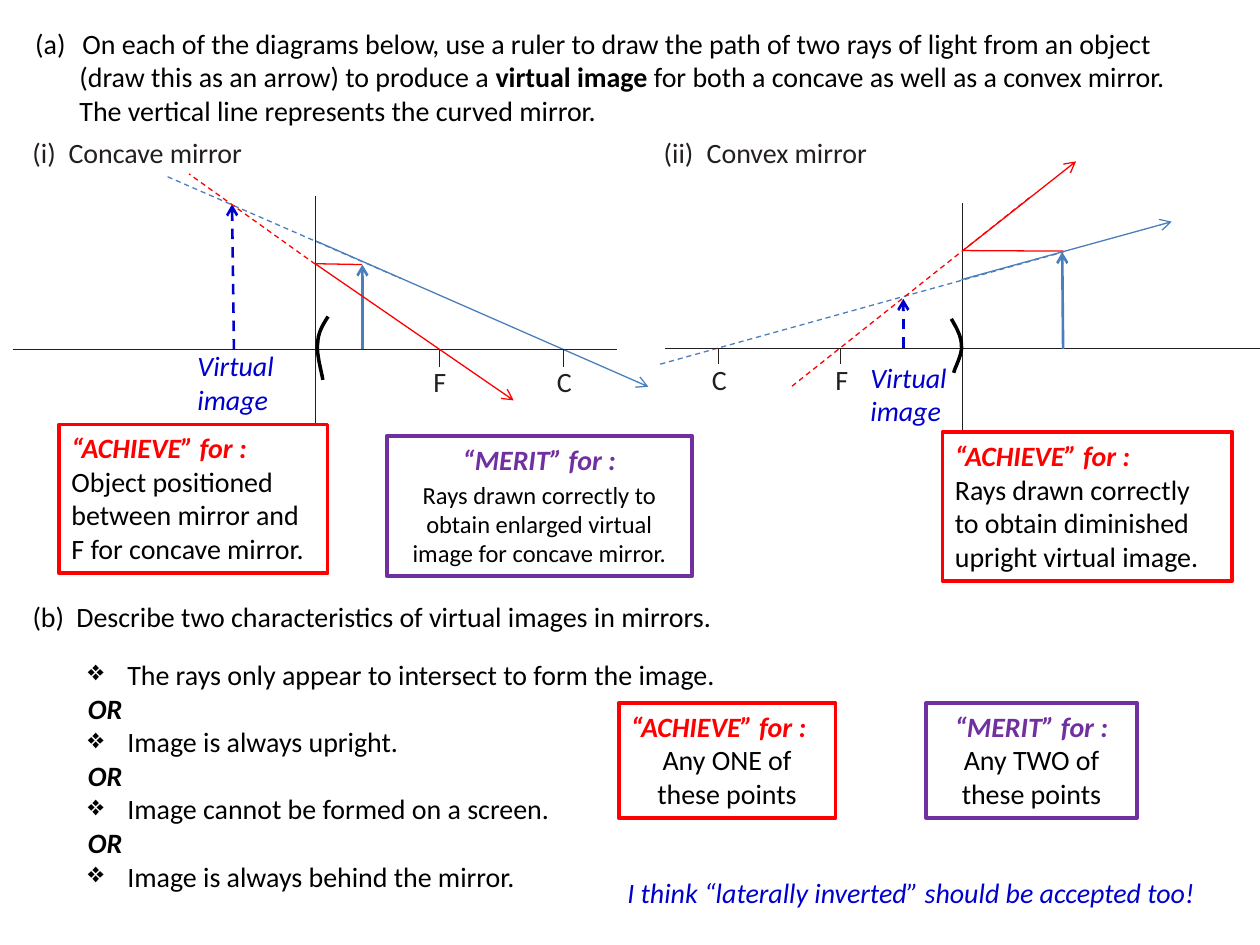
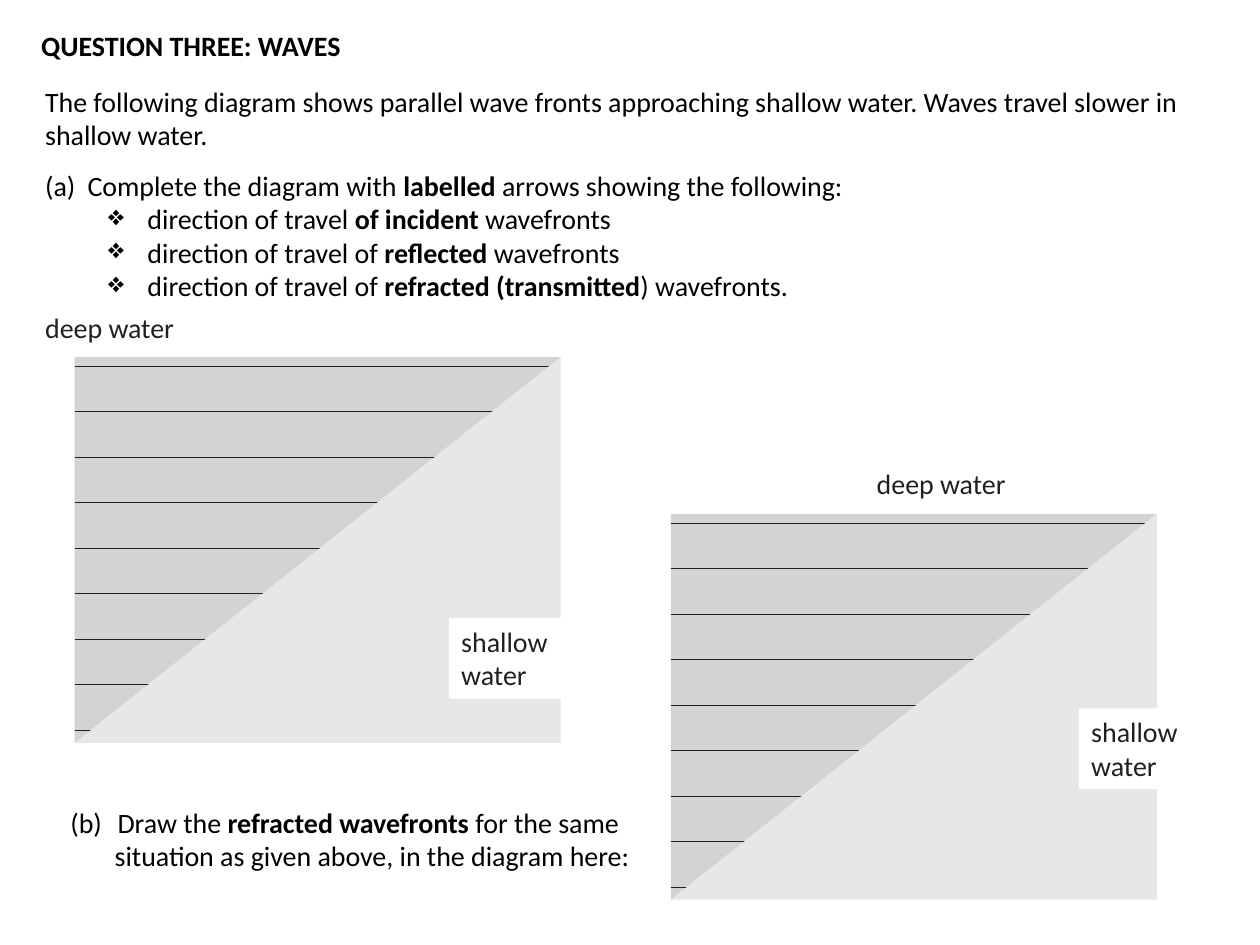
from dataclasses import dataclass

from lxml import etree
from pptx import Presentation
from pptx.dml.color import RGBColor
from pptx.enum.dml import MSO_LINE
from pptx.enum.shapes import MSO_CONNECTOR, MSO_SHAPE
from pptx.enum.text import MSO_ANCHOR, PP_ALIGN
from pptx.oxml.ns import qn
from pptx.util import Pt

STRAIGHT = MSO_CONNECTOR.STRAIGHT
RECT = MSO_SHAPE.RECTANGLE
DASH = MSO_LINE.DASH
TOP = MSO_ANCHOR.TOP
LEFT, CENTER = PP_ALIGN.LEFT, PP_ALIGN.CENTER


@dataclass(frozen=True)
class Theme:
    """Colours, font and type sizes shared by both slides."""
    font: str = "Calibri"
    body: float = 16
    small: float = 14
    black: str = "000000"
    ink: str = "231F20"
    white: str = "FFFFFF"
    red: str = "FF0000"
    blue: str = "4B7EBC"
    answer: str = "0000CC"
    merit: str = "7030A0"
    deep: str = "D1D3D4"
    shallow: str = "E6E7E8"
    hairline: float = 0.5
    ray: float = 0.75
    arrow: float = 1.5
    arc: float = 2
    frame: float = 2.25


T = Theme()


@dataclass(frozen=True)
class Para:
    """A paragraph; asterisks in its text enclose bold words."""
    text: str
    size: float = T.body
    color: str = T.black
    bold: bool = False
    italic: bool = False
    align: PP_ALIGN = LEFT
    left: float = 0
    hang: float = 0
    bullet: str = ""
    number: int = 0
    spacing: float = 1
    before: float = 0


@dataclass(frozen=True)
class Stroke:
    """A straight line, with an optional arrowhead at its end."""
    x1: float
    y1: float
    x2: float
    y2: float
    color: str = T.ink
    width: float = T.hairline
    dashed: bool = False
    arrow: bool = False


@dataclass(frozen=True)
class Criterion:
    """A framed marking note."""
    x: float
    y: float
    w: float
    h: float
    grade: str
    body: str
    color: str
    heading_align: PP_ALIGN = LEFT
    body_align: PP_ALIGN = LEFT
    size: float = T.body
    before: float = 0


@dataclass(frozen=True)
class MirrorDiagram:
    """A ray diagram with its lettered points and curved mirror."""
    strokes: tuple
    letters: tuple
    letter_y: float
    image_at: tuple
    arc: tuple
    tilt: float = 0


@dataclass(frozen=True)
class Pool:
    """A wave tank with the places of its two labels."""
    x: float
    y: float
    deep_at: tuple
    shallow_at: tuple


def rgb(color: str) -> RGBColor:
    """Turn a hex string into a colour."""
    return RGBColor.from_string(color)


def write(tf, paras, inset: bool = True) -> None:
    """Fill a text frame with paragraphs."""
    tf.word_wrap = True
    tf.vertical_anchor = TOP
    if not inset:
        tf.margin_left = tf.margin_right = tf.margin_top = tf.margin_bottom = 0
    for i, para in enumerate(paras):
        p = tf.paragraphs[0] if i == 0 else tf.add_paragraph()
        p.alignment = para.align
        if para.spacing != 1:
            p.line_spacing = para.spacing
        if para.before:
            p.space_before = Pt(para.before)
        pPr = p._p.get_or_add_pPr()
        pPr.set("marL", str(Pt(para.left)))
        pPr.set("indent", str(Pt(-para.hang)))
        if para.number:
            etree.SubElement(pPr, qn("a:buAutoNum"), type="alphaLcParenBoth",
                             startAt=str(para.number))
        elif para.bullet:
            etree.SubElement(pPr, qn("a:buChar"), char=para.bullet)
        for j, part in enumerate(para.text.split("*")):
            if part:
                r = p.add_run()
                r.text = part
                r.font.name, r.font.size = T.font, Pt(para.size)
                r.font.bold = para.bold or j % 2 == 1
                r.font.italic = para.italic
                r.font.color.rgb = rgb(para.color)


def add_text(s, x: float, y: float, w: float, h: float, *paras: Para, inset: bool = True) -> None:
    """Add a text box."""
    write(s.shapes.add_textbox(Pt(x), Pt(y), Pt(w), Pt(h)).text_frame, paras, inset)


def add_box(s, x: float, y: float, w: float, h: float, *paras: Para, line: str = "") -> None:
    """Add a white rectangle holding text."""
    sp = s.shapes.add_shape(RECT, Pt(x), Pt(y), Pt(w), Pt(h))
    sp.shadow.inherit = False
    sp.fill.solid()
    sp.fill.fore_color.rgb = rgb(T.white)
    if line:
        sp.line.color.rgb, sp.line.width = rgb(line), Pt(T.frame)
    else:
        sp.line.fill.background()
    write(sp.text_frame, paras)


def add_stroke(s, k: Stroke) -> None:
    """Draw one straight line."""
    c = s.shapes.add_connector(STRAIGHT, Pt(k.x1), Pt(k.y1), Pt(k.x2), Pt(k.y2))
    c.line.color.rgb, c.line.width = rgb(k.color), Pt(k.width)
    if k.dashed:
        c.line.dash_style = DASH
    if k.arrow:
        etree.SubElement(c.line._get_or_add_ln(), qn("a:tailEnd"), type="arrow")
    etree.SubElement(c._element.spPr, qn("a:effectLst"))


def add_outline(s, points, fill: str = "", line: str = "", tilt: float = 0) -> None:
    """Draw a filled polygon or an open line through the points."""
    (x, y), *rest = [(Pt(a), Pt(b)) for a, b in points]
    fb = s.shapes.build_freeform(x, y)
    fb.add_line_segments(rest, close=bool(fill))
    sp = fb.convert_to_shape()
    sp.shadow.inherit = False
    sp.rotation = tilt
    if fill:
        sp.fill.solid()
        sp.fill.fore_color.rgb = rgb(fill)
    else:
        sp.fill.background()
    if line:
        sp.line.color.rgb, sp.line.width = rgb(line), Pt(T.arc)
    else:
        sp.line.fill.background()


def curve(knots, steps: int = 10) -> list:
    """Sample a chain of cubic Bezier curves."""
    points = [knots[0]]
    for start in range(0, len(knots) - 1, 3):
        segment = knots[start:start + 4]
        for t in (i / steps for i in range(1, steps + 1)):
            weights = ((1 - t) ** 3, 3 * t * (1 - t) ** 2, 3 * t * t * (1 - t), t ** 3)
            points.append(tuple(sum(w * k[axis] for w, k in zip(weights, segment))
                                for axis in (0, 1)))
    return points


def add_mirror(s, d: MirrorDiagram) -> None:
    """Draw a ray diagram."""
    for k in d.strokes:
        add_stroke(s, k)
    for letter, x in d.letters:
        add_text(s, x, d.letter_y, 9, 14, Para(letter, color=T.ink), inset=False)
    add_text(s, *d.image_at, 80, 46, Para("Virtual image", color=T.answer, italic=True))
    add_outline(s, curve(d.arc), line=T.black, tilt=d.tilt)


def add_criterion(s, c: Criterion) -> None:
    """Draw a framed marking note."""
    add_box(s, c.x, c.y, c.w, c.h,
            Para(f"“{c.grade}” for :", color=c.color, bold=True, italic=True,
                 align=c.heading_align),
            Para(c.body, size=c.size, align=c.body_align, before=c.before), line=c.color)


def add_pool(s, pool: Pool) -> None:
    """Draw a tank with wavefronts that end at the shallow water."""
    w, h, first, gap, count = 277.7, 220.5, 5.3, 26, 9
    x, y, right, bottom = pool.x, pool.y, pool.x + w, pool.y + h
    add_outline(s, [(right, y), (x, y), (x, bottom)], fill=T.deep)
    for i in range(count):
        front = y + first + i * gap
        add_stroke(s, Stroke(x, front, x + 273, front))
    add_outline(s, [(right, y), (x, bottom), (right, bottom)], fill=T.shallow)
    add_text(s, *pool.deep_at, 95, 26.6, Para("deep water", color=T.ink))
    add_box(s, *pool.shallow_at, 90.7, 46, Para("shallow water", color=T.ink))


CONCAVE = MirrorDiagram(
    strokes=(
        Stroke(180, 137.5, 370.5, 221, T.blue, T.ray, arrow=True),
        Stroke(7.2, 199.8, 352.6, 199.8),
        Stroke(180.2, 112, 180.2, 287.5),
        Stroke(321.8, 199.8, 321.8, 209.7),
        Stroke(251, 199.8, 251, 209.7),
        Stroke(207.1, 199.6, 207.1, 151.2, T.blue, T.arrow, arrow=True),
        Stroke(206.8, 151.2, 180.2, 150.7, T.red, T.ray),
        Stroke(180.5, 151, 293.5, 228.8, T.red, T.ray, arrow=True),
        Stroke(95.8, 101, 229, 159.1, T.blue, T.ray, dashed=True),
        Stroke(133.7, 199.8, 132.6, 116.8, T.answer, T.arrow, dashed=True, arrow=True),
        Stroke(180.2, 151, 108, 99.4, T.red, T.ray, dashed=True),
    ),
    letters=(("F", 247.7), ("C", 318.2)), letter_y=208.4, image_at=(105.8, 195.8),
    arc=((186.5, 180.7), (183.6, 185.8), (181.4, 190.1), (181.4, 195.8),
         (180.7, 201.6), (184.3, 211.7), (185.5, 217)), tilt=3.1)

CONVEX = MirrorDiagram(
    strokes=(
        Stroke(377.3, 208.1, 607.7, 144, T.blue, T.ray, dashed=True),
        Stroke(380.2, 199, 720, 199),
        Stroke(550.1, 116, 550.1, 281.5),
        Stroke(410.4, 199, 410.4, 208),
        Stroke(480.2, 199, 480.2, 208),
        Stroke(607.5, 199.4, 607, 144, T.blue, T.arrow, arrow=True),
        Stroke(607.7, 143.5, 550.1, 143.2, T.red, T.ray),
        Stroke(550.1, 143.3, 614.9, 92.2, T.red, T.ray, arrow=True),
        Stroke(516.2, 198.7, 516.2, 170.8, T.answer, T.arrow, dashed=True, arrow=True),
        Stroke(549.4, 159.8, 669.6, 126.7, T.blue, T.ray, arrow=True),
        Stroke(588.2, 113, 452.2, 221, T.red, T.ray, dashed=True),
    ),
    letters=(("C", 406.8), ("F", 477.4)), letter_y=207.4, image_at=(490.3, 202.3),
    arc=((543.6, 182.2), (546.5, 187.2), (549.4, 192.2), (549.4, 197.3),
         (550.1, 202.3), (545.8, 209.5), (545, 213)))

CRITERIA = (
    Criterion(221, 249.1, 174.5, 80, "MERIT",
              "Rays drawn correctly to obtain enlarged virtual image for concave mirror.",
              T.merit, CENTER, CENTER, T.small, 2.2),
    Criterion(353.5, 401.8, 124, 65.5, "ACHIEVE", "Any ONE of these points",
              T.red, body_align=CENTER),
    Criterion(529.2, 401.8, 120.5, 65.5, "MERIT", "Any TWO of these points",
              T.merit, CENTER, CENTER),
    Criterion(33.8, 242.6, 153.4, 85, "ACHIEVE",
              "Object positioned between mirror and F for concave mirror.", T.red),
    Criterion(538.6, 247, 165.6, 85, "ACHIEVE",
              "Rays drawn correctly to obtain diminished upright virtual image.", T.red),
)

CHARACTERISTICS = ("The rays only appear to intersect to form the image.",
                   "Image is always upright.",
                   "Image cannot be formed on a screen.",
                   "Image is always behind the mirror.")

DIRECTIONS = ("direction of travel *of incident *wavefronts",
              "direction of travel of *reflected *wavefronts",
              "direction of travel of *refracted (transmitted*) wavefronts.")

POOLS = (Pool(383.4, 293.6, (493.9, 262.8), (616.5, 404.8)),
         Pool(42.7, 204, (18.7, 174.2), (256.5, 353.2)))


def build_mirrors(s) -> None:
    """Build the slide on virtual images in mirrors."""
    add_text(s, 13, 11.5, 694, 65.5,
             Para("On each of the diagrams below, use a ruler to draw the path of two rays "
                  "of light from an object", left=27, hang=27, number=1),
             Para("(draw this as an arrow) to produce a *virtual image *for both a concave "
                  "as well as a convex mirror.", left=25.3),
             Para("The vertical line represents the curved mirror.", left=25.3))
    for x, title, hang in ((11.5, "(i)\tConcave mirror", 20.6), (372.2, "(ii)\tConvex mirror", 24.6)):
        add_text(s, x, 74.2, 180, 26.6, Para(title, color=T.ink, left=hang, hang=hang))
    add_text(s, 11.5, 339.1, 422, 26.6,
             Para("(b)\tDescribe two characteristics of virtual images in mirrors.",
                  left=25.1, hang=25.1))
    points = []
    for text in CHARACTERISTICS:
        if points:
            points.append(Para("OR", bold=True, italic=True))
        points.append(Para(text, left=22.5, hang=22.5, bullet="❖"))
    add_text(s, 43.2, 372.2, 407, 143.3, *points)
    for diagram in (CONCAVE, CONVEX):
        add_mirror(s, diagram)
    for criterion in CRITERIA:
        add_criterion(s, criterion)
    add_text(s, 351.4, 496.8, 352, 26.6,
             Para("I think “laterally inverted” should be accepted too!",
                  color=T.answer, italic=True))


def build_waves(s) -> None:
    """Build the slide on wavefronts entering shallow water."""
    add_text(s, 16.5, 13, 200, 26.6, Para("QUESTION THREE: WAVES", bold=True))
    add_text(s, 18.7, 44.6, 690, 133.2,
             Para("The following diagram shows parallel wave fronts approaching shallow "
                  "water. Waves travel slower in shallow water."),
             Para("(a)\tComplete the diagram with *labelled *arrows showing the following:",
                  left=24.3, hang=24.3, spacing=1.5),
             *(Para(text, left=58.5, hang=22.5, bullet="❖") for text in DIRECTIONS))
    for pool in POOLS:
        add_pool(s, pool)
    add_text(s, 33.1, 456.5, 360, 46,
             Para("Draw the *refracted wavefronts *for the same", left=27, hang=27, number=2),
             Para("situation as given above, in the diagram here:", left=25.3))


def main() -> None:
    """Build and save the presentation."""
    prs = Presentation()
    prs.slide_width, prs.slide_height = Pt(720), Pt(540)
    for build in (build_mirrors, build_waves):
        build(prs.slides.add_slide(prs.slide_layouts[6]))
    prs.save("out.pptx")


if __name__ == "__main__":
    main()
